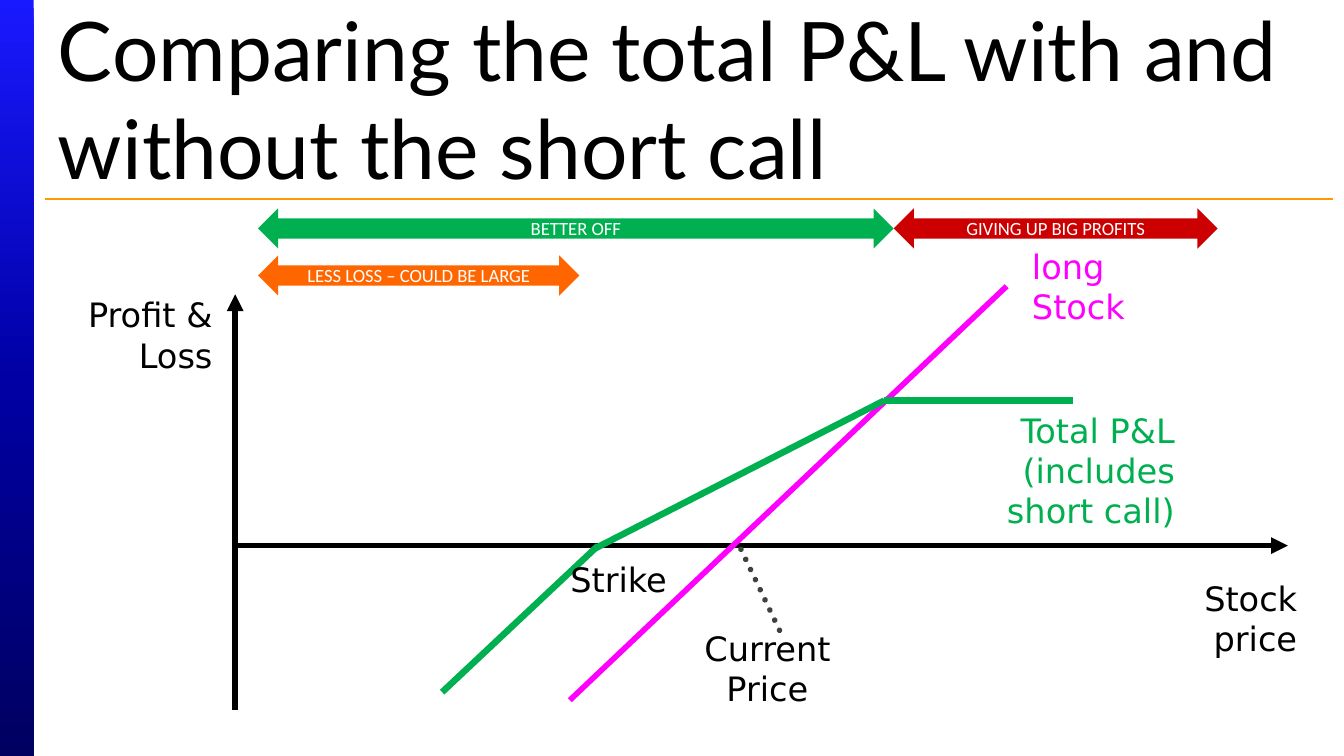
from copy import deepcopy
from dataclasses import dataclass

from pptx import Presentation
from pptx import util as u
from pptx.dml.color import RGBColor
from pptx.enum import dml, shapes, text
from pptx.oxml.ns import qn
from pptx.oxml.xmlchemy import OxmlElement

WIDTH, HEIGHT = u.Inches(10), u.Inches(5.625)
BLACK = RGBColor(0x00, 0x00, 0x00)
WHITE = RGBColor(0xFF, 0xFF, 0xFF)
GRAY = RGBColor(0x40, 0x40, 0x40)
GOLD = RGBColor(0xFF, 0x99, 0x00)
GREEN = RGBColor(0x00, 0xB0, 0x50)
MAGENTA = RGBColor(0xFF, 0x00, 0xFF)
RED = RGBColor(0xCC, 0x00, 0x00)
ORANGE = RGBColor(0xFF, 0x66, 0x00)
BAND = [
    (0, RGBColor(0x19, 0x19, 0xFF)),
    (0.5, RGBColor(0x00, 0x00, 0xA5)),
    (1, RGBColor(0x00, 0x00, 0x60)),
]
LEFT, CENTER, RIGHT = text.PP_ALIGN.LEFT, text.PP_ALIGN.CENTER, text.PP_ALIGN.RIGHT
AXIS_X, AXIS_Y, CAP_Y = 17.5, 72.18, 52.98
CALL_X = 65.8


@dataclass
class Box:
    x: float
    y: float
    w: float
    h: float

    def emu(self) -> tuple[int, int, int, int]:
        return across(self.x), down(self.y), across(self.w), down(self.h)


@dataclass
class Label:
    words: str
    box: Box
    color: RGBColor = BLACK
    align: text.PP_ALIGN = RIGHT
    font: str = "DejaVu Sans"
    size: float = 18


@dataclass
class Line:
    start: tuple[float, float]
    end: tuple[float, float]
    color: RGBColor
    width: float = 3
    arrow: bool = False
    dotted: bool = False


@dataclass
class Span:
    words: str
    box: Box
    color: RGBColor


def across(share: float) -> int:
    return int(WIDTH * share / 100)


def down(share: float) -> int:
    return int(HEIGHT * share / 100)


def write(sp, label: Label) -> None:
    tf = sp.text_frame
    tf.word_wrap = True
    tf.text = label.words
    p = tf.paragraphs[0]
    p.alignment = label.align
    font = p.runs[0].font
    font.name, font.size = label.font, u.Pt(label.size)
    font.color.rgb = label.color


def draw_band(slide) -> None:
    sp = slide.shapes.add_shape(
        shapes.MSO_SHAPE.RECTANGLE, *Box(0, 0, 2.5, 100).emu()
    )
    sp.shadow.inherit = False
    sp.line.fill.background()
    sp.fill.gradient()
    sp.fill.gradient_angle = 270
    stops = sp._element.spPr.find(qn("a:gradFill")).find(qn("a:gsLst"))
    stops.insert(1, deepcopy(stops[0]))
    for stop, (position, color) in zip(sp.fill.gradient_stops, BAND):
        stop.position = position
        stop.color.rgb = color


def draw_label(slide, label: Label):
    sp = slide.shapes.add_textbox(*label.box.emu())
    write(sp, label)
    return sp


def draw_line(slide, line: Line) -> None:
    (x1, y1), (x2, y2) = line.start, line.end
    sp = slide.shapes.add_connector(
        shapes.MSO_CONNECTOR.STRAIGHT, across(x1), down(y1), across(x2), down(y2)
    )
    sp.line.color.rgb = line.color
    sp.line.width = u.Pt(line.width)
    ln = sp.line._get_or_add_ln()
    if line.dotted:
        sp.line.dash_style = dml.MSO_LINE.ROUND_DOT
        ln.set("cap", "rnd")
    if line.arrow:
        tail = OxmlElement("a:tailEnd")
        tail.set("type", "triangle")
        ln.append(tail)
    sp._element.spPr.append(OxmlElement("a:effectLst"))


def draw_span(slide, span: Span) -> None:
    sp = slide.shapes.add_shape(
        shapes.MSO_SHAPE.LEFT_RIGHT_ARROW, *span.box.emu()
    )
    sp.shadow.inherit = False
    sp.fill.solid()
    sp.fill.fore_color.rgb = span.color
    sp.line.fill.background()
    tf = sp.text_frame
    tf.margin_left = tf.margin_right = tf.margin_top = tf.margin_bottom = 0
    tf.vertical_anchor = text.MSO_ANCHOR.MIDDLE
    write(sp, Label(span.words, span.box, WHITE, CENTER, "Calibri", 10))


TITLE = Label(
    "Comparing the total P&L with and without the short call",
    Box(3.33, 1.07, 95.83, 23.64), BLACK, LEFT, "Lato", 44,
)
LINES = [
    Line((3.33, 26.31), (99.17, 26.31), GOLD, 0.75),
    Line((AXIS_X, 93.87), (AXIS_X, 38.93), BLACK, arrow=True),
    Line((AXIS_X, AXIS_Y), (95.83, AXIS_Y), BLACK, arrow=True),
    Line((42.4, 92.62), (74.9, 37.87), MAGENTA),
    Line((58, 83.38), (55, AXIS_Y), GRAY, dotted=True),
    Line((CALL_X, CAP_Y), (79.8, CAP_Y), GREEN, 3.5),
    Line((32.9, 91.56), (44.5, AXIS_Y), GREEN, 3.5),
    Line((44.3, 72.53), (CALL_X, CAP_Y), GREEN, 3.5),
]
LABELS = [
    Label("Stock price", Box(86.7, 75.56, 10.8, 12.62)),
    Label("long Stock", Box(75.8, 31.64, 14.5, 12.62), MAGENTA, LEFT),
    Label("Strike", Box(39.8, 73.07, 10.8, 7.11)),
    Label("Current Price", Box(50, 82.13, 14.2, 12.62), align=CENTER),
    Label("Profit & Loss", Box(5.1, 38.04, 11.7, 10.13)),
    Label("Total P&L (includes short call)", Box(72, 53.33, 16.4, 17.96), GREEN),
]
SPANS = [
    Span("GIVING UP BIG PROFITS", Box(66.5, 27.56, 24.1, 5.33), RED),
    Span("BETTER OFF", Box(19.2, 27.56, 47.3, 5.33), GREEN),
    Span("LESS LOSS – COULD BE LARGE", Box(19.2, 33.78, 23.9, 5.33), ORANGE),
]


def main() -> None:
    prs = Presentation()
    prs.slide_width, prs.slide_height = WIDTH, HEIGHT
    slide = prs.slides.add_slide(prs.slide_layouts[6])
    draw_band(slide)
    title = draw_label(slide, TITLE)
    title.text_frame.vertical_anchor = text.MSO_ANCHOR.MIDDLE
    for line in LINES:
        draw_line(slide, line)
    for label in LABELS:
        draw_label(slide, label)
    for span in SPANS:
        draw_span(slide, span)
    prs.save("out.pptx")


if __name__ == "__main__":
    main()
